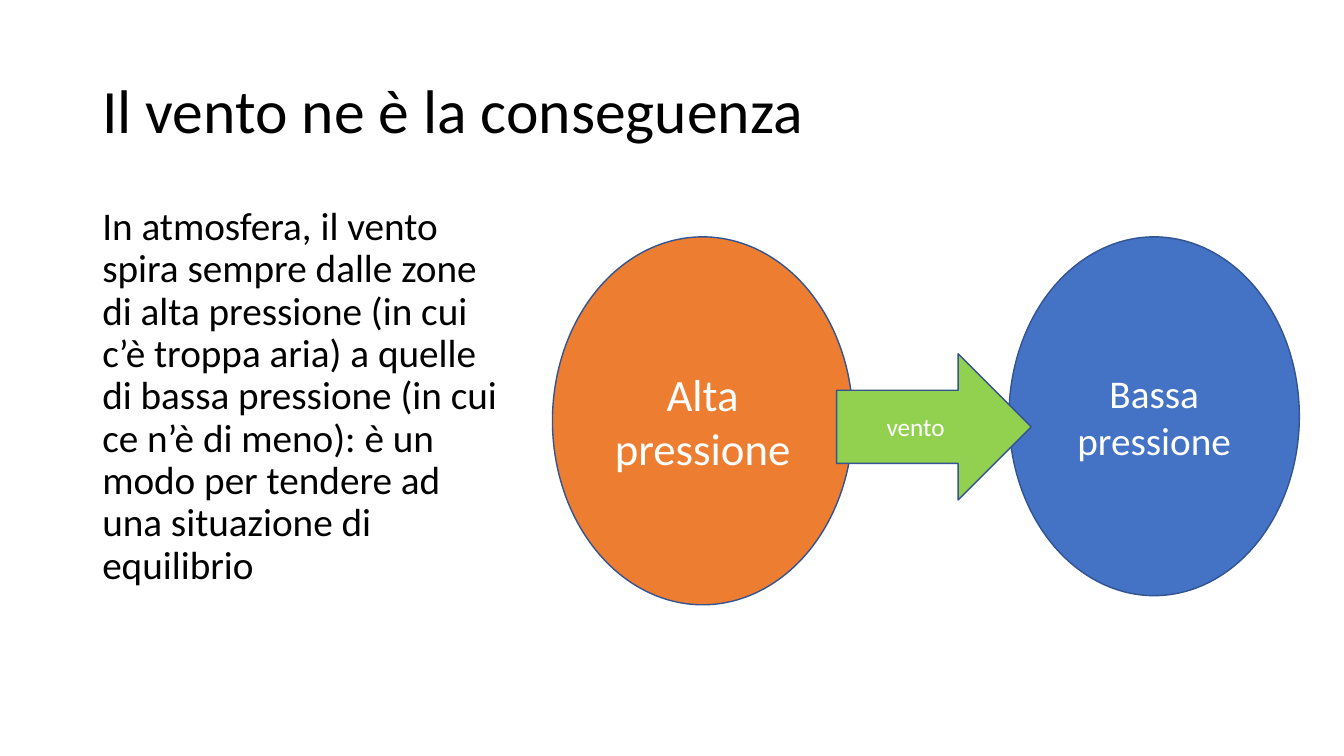
from pptx import Presentation
from pptx.dml.color import RGBColor
from pptx.enum.shapes import MSO_SHAPE
from pptx.enum.text import MSO_ANCHOR, PP_ALIGN
from pptx.util import Pt

BLACK = RGBColor(0x00, 0x00, 0x00)
WHITE = RGBColor(0xFF, 0xFF, 0xFF)
ORANGE = RGBColor(0xED, 0x7D, 0x31)
BLUE = RGBColor(0x44, 0x72, 0xC4)
GREEN = RGBColor(0x92, 0xD0, 0x50)
OUTLINE = RGBColor(0x32, 0x54, 0x91)


def write_text(frame, text, *, font, size, color, align=PP_ALIGN.LEFT,
               anchor=MSO_ANCHOR.TOP, line_spacing=1.0):
    frame.word_wrap = True
    frame.vertical_anchor = anchor
    para = frame.paragraphs[0]
    para.alignment = align
    para.line_spacing = line_spacing
    span = para.add_run()
    span.text = text
    span.font.name = font
    span.font.size = Pt(size)
    span.font.color.rgb = color


class PageBuilder:
    """Draws on one page in a shared style; places are (left, top, width, height) in points."""

    font = "Calibri"
    outline_width = 1

    def __init__(self, page):
        self.page = page

    def text_box(self, place, text, size, anchor=MSO_ANCHOR.TOP):
        box = self.page.shapes.add_textbox(*map(Pt, place))
        write_text(box.text_frame, text, font=self.font, size=size,
                   color=BLACK, anchor=anchor, line_spacing=0.9)

    def labelled_shape(self, kind, place, text, size, fill):
        shape = self.page.shapes.add_shape(kind, *map(Pt, place))
        shape.shadow.inherit = False
        shape.fill.solid()
        shape.fill.fore_color.rgb = fill
        shape.line.color.rgb = OUTLINE
        shape.line.width = Pt(self.outline_width)
        write_text(shape.text_frame, text, font=self.font, size=size,
                   color=WHITE, align=PP_ALIGN.CENTER, anchor=MSO_ANCHOR.MIDDLE)


def main():
    deck = Presentation()
    deck.slide_width, deck.slide_height = Pt(960), Pt(540)
    builder = PageBuilder(deck.slides.add_slide(deck.slide_layouts[6]))

    builder.text_box((66, 28.8, 828, 104.4), "Il vento ne è la conseguenza",
                     44, MSO_ANCHOR.MIDDLE)
    builder.text_box(
        (66, 144, 297.4, 342.7),
        "In atmosfera, il vento spira sempre dalle zone di alta pressione "
        "(in cui c’è troppa aria) a quelle di bassa pressione (in cui ce n’è "
        "di meno): è un modo per tendere ad una situazione di equilibrio",
        28)

    zones_top = 169.2
    builder.labelled_shape(MSO_SHAPE.OVAL, (394.6, zones_top, 214.6, 262.8),
                           "Alta pressione", 32, ORANGE)
    builder.labelled_shape(MSO_SHAPE.OVAL, (720.7, zones_top, 207.4, 256.3),
                           "Bassa pressione", 28, BLUE)
    builder.labelled_shape(MSO_SHAPE.RIGHT_ARROW, (597.6, 252.7, 139, 104.4),
                           "vento", 18, GREEN)

    deck.save("out.pptx")


if __name__ == "__main__":
    main()
